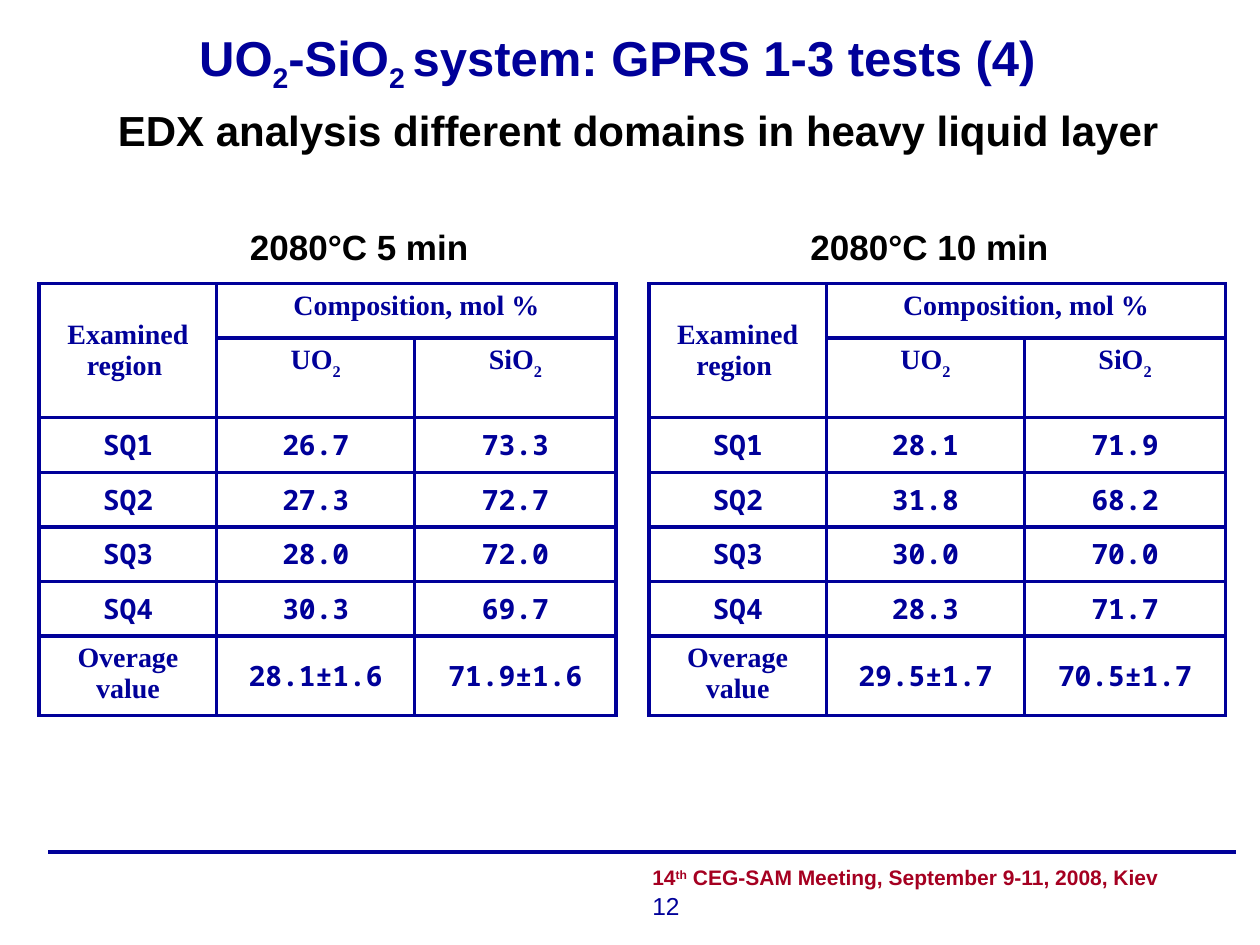
from lxml import etree
from pptx import Presentation
from pptx import util as u
from pptx.dml.color import RGBColor
from pptx.enum import shapes, text
from pptx.oxml.ns import qn

BLUE, RED, BLACK = "000099", "A50021", "000000"
SERIF, MONO = "Times New Roman", "Noto Sans Mono"
COLS = (3.58, 3.99, 4.06)
ROWS = (1.09, 1.61, 1.1, 1.1, 1.1, 1.1, 1.6)
MID = text.MSO_ANCHOR.MIDDLE


def tint(code):
    return RGBColor.from_string(code)


def write(para, words, size=16, font="Arial", color=BLACK, bold=True, base=0):
    run = para.add_run()
    run.text = words
    run.font.size = u.Pt(size)
    run.font.name = font
    run.font.bold = bold
    run.font.color.rgb = tint(color)
    if base:
        run.font._element.set("baseline", str(base * 1000))


def center(frame, parts, **style):
    para = frame.paragraphs[0]
    para.alignment = text.PP_ALIGN.CENTER
    for words, base in parts:
        write(para, words, base=base, **style)


def box(slide, left, top, width, height):
    frame = slide.shapes.add_textbox(*map(u.Cm, (left, top, width, height))).text_frame
    frame.word_wrap = True
    return frame


def label(slide, words, place, size):
    center(box(slide, *place), [(words, 0)], size=size)


def edge(cell):
    props = cell._tc.get_or_add_tcPr()
    for spot, side in enumerate(("lnL", "lnR", "lnT", "lnB")):
        line = etree.Element(qn("a:" + side), w=str(u.Pt(2.25)))
        fill = etree.SubElement(line, qn("a:solidFill"))
        etree.SubElement(fill, qn("a:srgbClr"), val=BLUE)
        props.insert(spot, line)


def put(cell, parts, font=MONO, anchor=MID):
    cell.vertical_anchor = anchor
    center(cell.text_frame, parts, font=font, color=BLUE)


def grid(slide, left, data):
    frame = slide.shapes.add_table(
        len(ROWS), len(COLS), u.Cm(left), u.Cm(5.72), u.Cm(sum(COLS)), u.Cm(sum(ROWS)))
    table = frame.table
    table.first_row = table.horz_banding = False
    for col, width in zip(table.columns, COLS):
        col.width = u.Cm(width)
    for row, height in zip(table.rows, ROWS):
        row.height = u.Cm(height)
    for cell in table.iter_cells():
        cell.fill.background()
        edge(cell)
    table.cell(0, 0).merge(table.cell(1, 0))
    table.cell(0, 1).merge(table.cell(0, 2))
    top = text.MSO_ANCHOR.TOP
    put(table.cell(0, 0), [("Examined region ", 0)], SERIF)
    put(table.cell(0, 1), [("Composition, mol %", 0)], SERIF, top)
    for col, oxide in enumerate(("UO", "SiO"), 1):
        put(table.cell(1, col), [(oxide, 0), ("2", -30)], SERIF, top)
    names = ("SQ1", "SQ2", "SQ3", "SQ4", "Overage value")
    for row, (name, pair) in enumerate(zip(names, data), 2):
        last = name == names[-1]
        put(table.cell(row, 0), [(name, 0)], SERIF if last else MONO, top if last else MID)
        for col, value in enumerate(pair, 1):
            put(table.cell(row, col), [(value, 0)])


def title(slide):
    shape = slide.shapes.title
    shape.left, shape.top, shape.width, shape.height = map(u.Cm, (1.65, 0.53, 21.59, 1.4))
    frame = shape.text_frame
    frame.auto_size = text.MSO_AUTO_SIZE.NONE
    frame.vertical_anchor = MID
    parts = [("UO", 0), ("2", -25), ("-SiO", 0), ("2 ", -25), ("system: GPRS 1-3 tests (4)", 0)]
    center(frame, parts, size=28, color=BLUE)


def footer(slide):
    rule = slide.shapes.add_connector(
        shapes.MSO_CONNECTOR.STRAIGHT, *map(u.Cm, (0.97, 17.17, 24.92, 17.17)))
    rule.line.color.rgb = tint(BLUE)
    rule.line.width = u.Pt(2.25)
    etree.SubElement(rule._element.spPr, qn("a:effectLst"))
    frame = box(slide, 12.9, 17.32, 11.94, 1.27)
    frame.vertical_anchor = MID
    para = frame.paragraphs[0]
    tabs = etree.SubElement(para._p.get_or_add_pPr(), qn("a:tabLst"))
    etree.SubElement(tabs, qn("a:tab"), pos=str(u.Cm(10.9)), algn="l")
    write(para, "14", size=12, color=RED)
    write(para, "th", size=12, color=RED, base=30)
    write(para, " CEG-SAM Meeting, September 9-11, 2008, Kiev", size=12, color=RED)
    write(para, "\t12", size=14, color=BLUE, bold=False)


def main():
    deck = Presentation()
    deck.slide_width, deck.slide_height = u.Cm(25.4), u.Cm(19.05)
    slide = deck.slides.add_slide(deck.slide_layouts[5])
    title(slide)
    label(slide, "EDX analysis different domains in heavy liquid layer", (1.63, 1.98, 22.48, 1.2), 24)
    early = (("26.7", "73.3"), ("27.3", "72.7"), ("28.0", "72.0"), ("30.3", "69.7"),
             ("28.1±1.6", "71.9±1.6"))
    late = (("28.1", "71.9"), ("31.8", "68.2"), ("30.0", "70.0"), ("28.3", "71.7"),
            ("29.5±1.7", "70.5±1.7"))
    for left, start, words, data in (
            (0.79, 3.76, "2080°C 5 min ", early), (13.08, 15.16, "2080°C 10 min", late)):
        label(slide, words, (start, 4.42, 7.16, 1.09), 20)
        grid(slide, left, data)
    footer(slide)
    deck.save("out.pptx")


if __name__ == "__main__":
    main()
